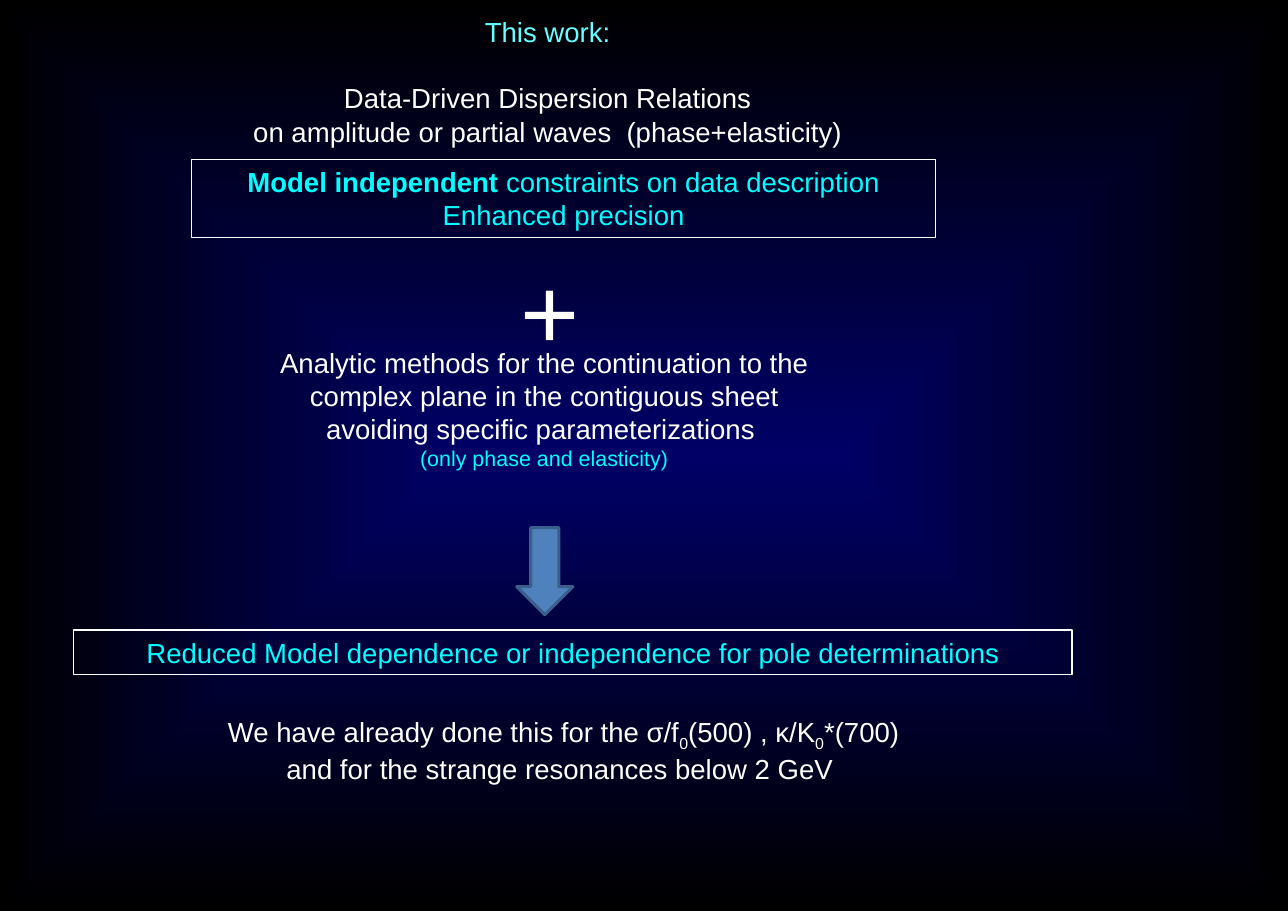
import pptx
import pptx.util
import pptx.dml.color
import pptx.enum.shapes
import pptx.enum.text
import pptx.oxml
import pptx.oxml.ns

Inches = pptx.util.Inches
Pt = pptx.util.Pt
RGBColor = pptx.dml.color.RGBColor
MSO_SHAPE = pptx.enum.shapes.MSO_SHAPE

NAVY = RGBColor(0x00, 0x00, 0x66)
BLACK = RGBColor(0x00, 0x00, 0x00)
WHITE = RGBColor(0xFF, 0xFF, 0xFF)
CYAN = RGBColor(0x00, 0xFF, 0xFF)
PALE_CYAN = RGBColor(0x66, 0xFF, 0xFF)
ARROW_FILL = RGBColor(0x4F, 0x81, 0xBD)
ARROW_LINE = RGBColor(0x3A, 0x5F, 0x8C)


def style(r, color, size=18):
    r.font.name = "Arial"
    r.font.size = Pt(size)
    r.font.color.rgb = color


def write(sp, lines, color, size=18, wrap=True):
    tf = sp.text_frame
    tf.word_wrap = wrap
    tf.auto_size = pptx.enum.text.MSO_AUTO_SIZE.SHAPE_TO_FIT_TEXT
    tf.vertical_anchor = pptx.enum.text.MSO_ANCHOR.TOP
    tf.text = "\n".join(lines)
    for p in tf.paragraphs:
        p.alignment = pptx.enum.text.PP_ALIGN.CENTER
        for r in p.runs:
            style(r, color, size)


prs = pptx.Presentation()
prs.slide_width = Inches(11.69)
prs.slide_height = Inches(8.27)
s = prs.slides.add_slide(prs.slide_layouts[5])

fill = s.background.fill
fill.gradient()
for stop, color in zip(fill.gradient_stops, (NAVY, BLACK)):
    stop.color.rgb = color
lin = s.element.xpath(".//a:lin")[0]
lin.getparent().replace(lin, pptx.oxml.parse_xml(
    f'<a:path {pptx.oxml.ns.nsdecls("a")} path="shape">'
    '<a:fillToRect l="50000" t="50000" r="50000" b="50000"/></a:path>'))

title = s.shapes.title
title.left, title.top = Inches(2.2), Inches(0.09)
title.width, title.height = Inches(5.54), Inches(0.4)
write(title, ["This work:"], PALE_CYAN)

texts = [
    ((1.72, 0.69, 6.5, 0.71), 18, True,
     ["Data-Driven Dispersion Relations",
      "on amplitude or partial waves  (phase+elasticity)"]),
    ((4.62, 2.21, 0.74, 1.21), 66, False, ["+"]),
    ((2.44, 3.09, 5, 1.25), 18, True,
     ["Analytic methods for the continuation to the complex plane in the contiguous sheet",
      "avoiding specific parameterizations ",
      "(only phase and elasticity)"]),
    ((1.56, 6.44, 7.11, 0.71), 18, True,
     ["", "and for the strange resonances below 2 GeV "]),
]
for box, size, wrap, lines in texts:
    sp = s.shapes.add_textbox(*map(Inches, box))
    write(sp, lines, WHITE, size, wrap)
    if lines[-1].startswith("(only"):
        style(sp.text_frame.paragraphs[-1].runs[0], CYAN, 14)

p = sp.text_frame.paragraphs[0]
for i, text in enumerate(
        ["We have already done this for the σ/f", "0", "(500) , κ/K", "0", "*(700)"]):
    r = p.add_run()
    r.text = text
    style(r, WHITE)
    if i % 2:
        r.font._element.set("baseline", "-25000")

frames = [
    ((1.74, 1.45, 6.75, 0.71), ["Model independent ", "Enhanced precision"]),
    ((0.67, 5.72, 9.06, 0.4),
     ["Reduced Model dependence or independence for pole determinations"]),
]
for box, lines in frames:
    sp = s.shapes.add_shape(MSO_SHAPE.RECTANGLE, *map(Inches, box))
    sp.shadow.inherit = False
    sp.fill.background()
    sp.line.color.rgb = WHITE
    sp.line.width = Pt(0.75)
    write(sp, lines, CYAN)
    if len(lines) == 2:
        p = sp.text_frame.paragraphs[0]
        p.runs[0].font.bold = True
        r = p.add_run()
        r.text = "constraints on data description"
        style(r, CYAN)

arrow = s.shapes.add_shape(
    MSO_SHAPE.DOWN_ARROW, Inches(4.69), Inches(4.79), Inches(0.51), Inches(0.79))
arrow.shadow.inherit = False
arrow.fill.solid()
arrow.fill.fore_color.rgb = ARROW_FILL
arrow.line.color.rgb = ARROW_LINE
arrow.line.width = Pt(2)

prs.save("out.pptx")
